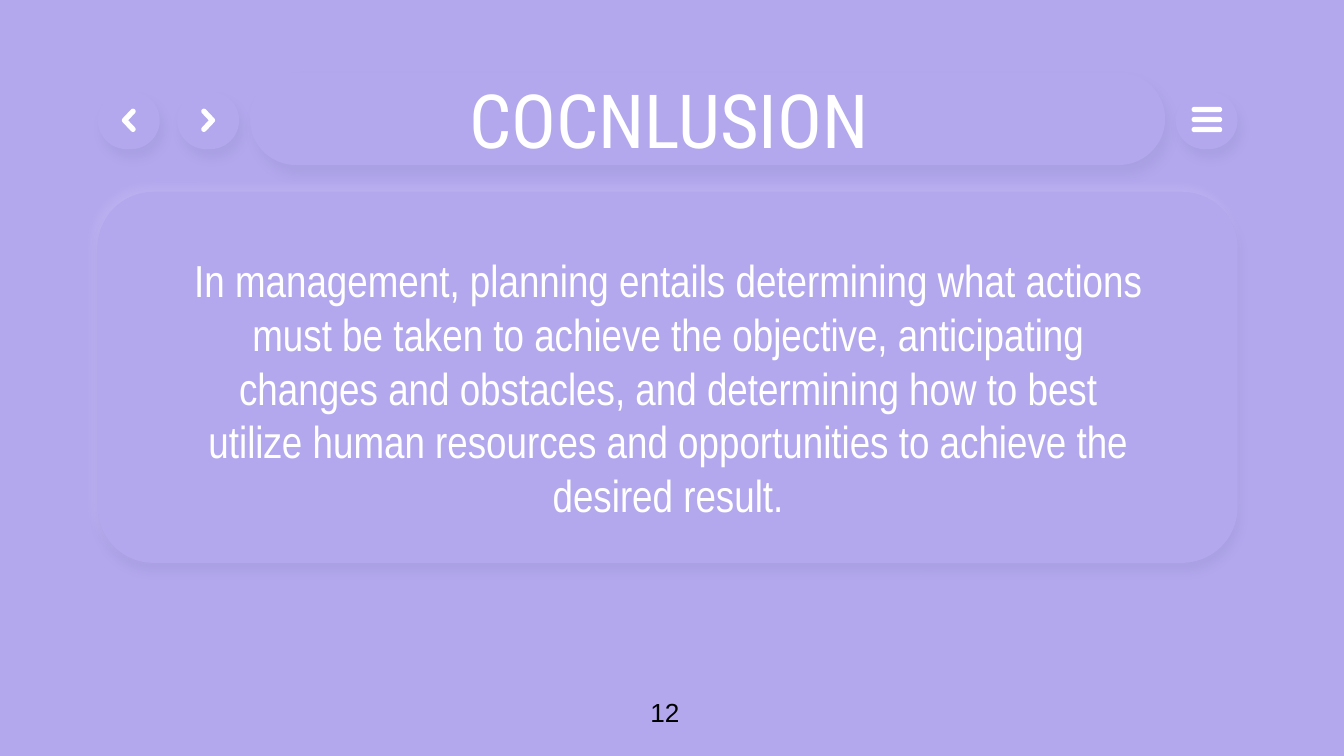
import math

import lxml.etree
import pptx
import pptx.dml.color
import pptx.enum.shapes
import pptx.enum.text
import pptx.oxml.ns
import pptx.util

Cm = pptx.util.Cm
COLOURS = {
    "lilac": "B3A8ED",
    "glow": "C4BBF5",
    "shade": "3E3E7A",
    "white": "FFFFFF",
    "black": "000000",
}
# Colour, opacity in %, distance in pt, direction in degrees
GLOW = ("glow", 52, 3, 226)
PANEL_SHADE = ("shade", 8, 5.2, 84)
SHADE = ("shade", 8, 5.2, 66)
BLUR = 5.6

BUTTON_TOP, BUTTON_WIDTH, BUTTON_HEIGHT = 1.73, 1.17, 1.09
BACK_LEFT, FORWARD_LEFT, MENU_LEFT = 1.85, 3.35, 22.22
CONCLUSION = (
    "In management, planning entails determining what actions must be taken "
    "to achieve the objective, anticipating changes and obstacles, and "
    "determining how to best utilize human resources and opportunities to "
    "achieve the desired result."
)


def rgb(colour):
    return pptx.dml.color.RGBColor.from_string(COLOURS[colour])


def paint(shape, colour):
    shape.shadow.inherit = False
    shape.fill.solid()
    shape.fill.fore_color.rgb = rgb(colour)
    shape.line.fill.background()


def add_shadow(shape, colour, opacity, distance, direction):
    qn = pptx.oxml.ns.qn
    effects = shape.element.spPr.find(qn("a:effectLst"))
    outer = lxml.etree.SubElement(
        effects, qn("a:outerShdw"),
        blurRad=str(pptx.util.Pt(BLUR)), dist=str(pptx.util.Pt(distance)),
        dir=str(direction * 60000), algn="bl", rotWithShape="0")
    tint = lxml.etree.SubElement(outer, qn("a:srgbClr"), val=COLOURS[colour])
    lxml.etree.SubElement(tint, qn("a:alpha"), val=str(opacity * 1000))


def add_rounded(slide, left, top, width, height, roundness=0.5,
                colour="lilac", shadow=None):
    rounded = slide.shapes.add_shape(
        pptx.enum.shapes.MSO_SHAPE.ROUNDED_RECTANGLE,
        Cm(left), Cm(top), Cm(width), Cm(height))
    rounded.adjustments[0] = roundness
    paint(rounded, colour)
    if shadow:
        add_shadow(rounded, *shadow)


def add_button(slide, left):
    add_rounded(slide, left, BUTTON_TOP, BUTTON_WIDTH, BUTTON_HEIGHT,
                shadow=SHADE)


def arc(x, y, radius, start, end, steps=8):
    angles = [start + (end - start) * i / steps for i in range(steps + 1)]
    return [(x + radius * math.cos(a), y + radius * math.sin(a))
            for a in angles]


def add_chevron(slide, centre_x, centre_y, direction):
    """Round-ended chevron: direction 1 points right, -1 points left."""
    radius, reach, rise = 0.05, 0.08, 0.17
    slope = math.atan2(rise, 2 * reach)
    normal = math.pi / 2 - slope
    outline = (
        arc(-reach, -rise, radius, slope + math.pi / 2, slope + 1.5 * math.pi)
        + arc(reach, 0, radius, -normal, normal)
        + arc(-reach, rise, radius, normal, normal + math.pi)
        + [(reach - radius / math.cos(normal), 0)]
    )
    points = [(Cm(centre_x + direction * x), Cm(centre_y + y))
              for x, y in outline]
    builder = slide.shapes.build_freeform(*points[0], scale=1.0)
    builder.add_line_segments(points[1:], close=True)
    paint(builder.convert_to_shape(), "white")


def write(holder, text, size, font, colour, align, left_inset=0.25,
          top_inset=0.25):
    frame = holder.text_frame
    frame.word_wrap = True
    frame.auto_size = pptx.enum.text.MSO_AUTO_SIZE.NONE
    frame.vertical_anchor = pptx.enum.text.MSO_ANCHOR.TOP
    frame.margin_left, frame.margin_top = Cm(left_inset), Cm(top_inset)
    frame.margin_right = frame.margin_bottom = Cm(0.25)
    paragraph = frame.paragraphs[0]
    paragraph.alignment = align
    paragraph.space_before = pptx.util.Pt(0)
    run = paragraph.add_run()
    run.text = text
    run.font.size = pptx.util.Pt(size)
    run.font.name = font
    run.font.color.rgb = rgb(colour)


def place(slide, placeholder, left, top, width, height):
    """Move a placeholder into position and in front of the panels."""
    placeholder.left, placeholder.top = Cm(left), Cm(top)
    placeholder.width, placeholder.height = Cm(width), Cm(height)
    slide.shapes.element.append(placeholder.element)


def main():
    deck = pptx.Presentation()
    deck.slide_width, deck.slide_height = Cm(25.4), Cm(14.29)
    slide = deck.slides.add_slide(deck.slide_layouts[0])
    slide.background.fill.solid()
    slide.background.fill.fore_color.rgb = rgb("lilac")
    centre = pptx.enum.text.PP_ALIGN.CENTER

    # Content panel and title bar
    for shadow in (GLOW, PANEL_SHADE):
        add_rounded(slide, 1.85, 3.63, 21.54, 7.01, 0.15, shadow=shadow)
    add_rounded(slide, 4.72, 1.37, 17.3, 1.75, shadow=SHADE)

    # Menu button
    add_button(slide, MENU_LEFT)
    for row in range(3):
        add_rounded(slide, 22.52, 2.02 + 0.19 * row, 0.58, 0.1,
                    colour="white")

    # Title and conclusion
    title, conclusion = slide.shapes.title, slide.placeholders[1]
    place(slide, title, 6.58, 1.14, 12.12, 1.47)
    write(title, "COCNLUSION", 40, "Roboto Condensed", "white", centre)
    place(slide, conclusion, 3.33, 2.95, 18.59, 4.11)
    write(conclusion, CONCLUSION, 24, "Arial Narrow", "white", centre,
          top_inset=1.83)

    # Navigation buttons
    for left, direction in ((FORWARD_LEFT, 1), (BACK_LEFT, -1)):
        add_button(slide, left)
        add_chevron(slide, left + BUTTON_WIDTH / 2,
                    BUTTON_TOP + BUTTON_HEIGHT / 2, direction)

    # Page number
    page = slide.shapes.add_textbox(Cm(11.79), Cm(13.03), Cm(2.06), Cm(0.86))
    write(page, "12", 14, "Arial", "black", pptx.enum.text.PP_ALIGN.LEFT,
          left_inset=0.5, top_inset=0.13)

    deck.save("out.pptx")


if __name__ == "__main__":
    main()
